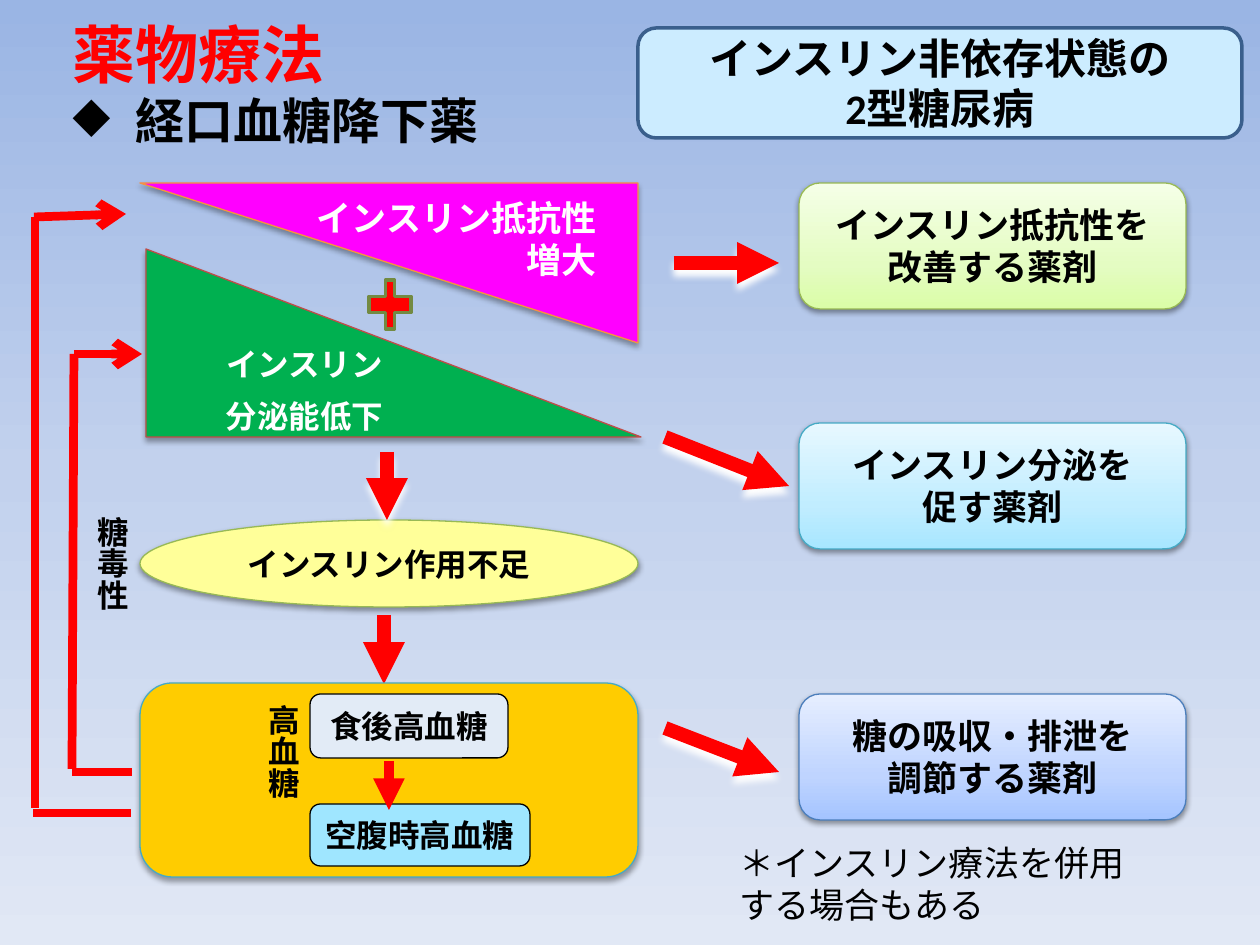
from collections import namedtuple
from copy import deepcopy
from dataclasses import dataclass

from lxml import etree
from pptx import Presentation
from pptx import util as u
from pptx.dml.color import RGBColor
from pptx.enum import shapes, text
from pptx.oxml.ns import qn

PX = 914400 / 126  # EMU per px
KIND = shapes.MSO_SHAPE
ALIGN = text.PP_ALIGN
MIDDLE, TOP = text.MSO_ANCHOR.MIDDLE, text.MSO_ANCHOR.TOP


@dataclass(frozen=True)
class Theme:
    red: str = "FF0000"
    black: str = "000000"
    white: str = "FFFFFF"
    cjk: str = "Noto Sans CJK JP"
    latin: str = "Calibri"
    heading: str = "Arial"
    title: int = 36
    subtitle: int = 28
    banner: int = 24
    large: int = 20
    body: int = 18
    gap: int = 8
    # Shadows: colour, opacity %, blur pt, distance pt
    deep: tuple = ("000000", 35, 3.1, 1.8)
    soft: tuple = ("000000", 38, 3.1, 1.6)
    glow: tuple = ("FFFFFF", 100, 4, 4)


T = Theme()


class Box(namedtuple("Box", "x y w h")):
    def at(self, dx, dy, w, h):
        return Box(self.x + dx, self.y + dy, w, h)

    def emu(self):
        return [px(value) for value in self]


def px(value):
    return u.Emu(round(value * PX))


def rgb(value):
    return RGBColor.from_string(value)


def add_shadow(effects, shadow):
    colour, opacity, blur, distance = shadow
    outer = etree.SubElement(effects, qn("a:outerShdw"), blurRad=str(u.Pt(blur)),
                             dist=str(u.Pt(distance)), dir="5400000", rotWithShape="0")
    tone = etree.SubElement(outer, qn("a:srgbClr"), val=colour)
    etree.SubElement(tone, qn("a:alpha"), val=str(opacity * 1000))


def fill_gradient(fill, owner, stops, angle):
    fill.gradient()
    fill.gradient_angle = angle
    stop_list = next(owner.element.iter(qn("a:gsLst")))
    stop_list.append(deepcopy(stop_list[0]))
    for stop, (position, colour) in zip(fill.gradient_stops, stops):
        stop.position = position
        stop.color.rgb = rgb(colour)


def add_shape(page, box, kind, fill, line, width=0.75, shadow=None):
    shape = page.shapes.add_shape(kind, *box.emu())
    shape.shadow.inherit = False
    if shadow:
        add_shadow(shape.element.spPr.find(qn("a:effectLst")), shadow)
    if isinstance(fill, str):
        shape.fill.solid()
        shape.fill.fore_color.rgb = rgb(fill)
    else:
        fill_gradient(shape.fill, shape, fill, 90)
    shape.line.color.rgb = rgb(line)
    shape.line.width = u.Pt(width)
    return shape


def write(shape, lines, size, font=T.cjk, colour=T.black, bold=True, align=ALIGN.CENTER,
          anchor=MIDDLE, wrap=False, gap=0, insets=None):
    frame = shape.text_frame
    frame.word_wrap = wrap
    frame.vertical_anchor = anchor
    if insets:
        (frame.margin_left, frame.margin_top,
         frame.margin_right, frame.margin_bottom) = [px(value) for value in insets]
    frame.text = "\n".join(lines)
    for para in frame.paragraphs:
        para.alignment = align
        para.space_before = u.Pt(gap)
        para.font.name = font
        para.font.size = u.Pt(size)
        para.font.bold = bold
        para.font.color.rgb = rgb(colour)
    return frame


def add_line(page, box, start, end, width, head=None, shadow=None):
    points = [px(v) for v in (box.x + start[0], box.y + start[1],
                              box.x + end[0], box.y + end[1])]
    line = page.shapes.add_connector(shapes.MSO_CONNECTOR.STRAIGHT, *points)
    line.line.color.rgb = rgb(T.red)
    line.line.width = u.Pt(width)
    if head:
        etree.SubElement(line.line._get_or_add_ln(), qn("a:tailEnd"), type=head)
    effects = etree.SubElement(line.element.spPr, qn("a:effectLst"))
    if shadow:
        add_shadow(effects, shadow)


def add_vertical_label(page, box, label):
    frame = write(page.shapes.add_textbox(*box.emu()), [label], T.body,
                  anchor=TOP, wrap=True)
    frame._txBody.bodyPr.set("vert", "eaVert")


def add_heading(page, box):
    title = page.shapes.title
    title.left, title.top, title.width, title.height = box.emu()
    frame = write(title, ["薬物療法", "経口血糖降下薬"], T.title, T.heading, T.red,
                  align=ALIGN.LEFT, anchor=TOP, wrap=True)
    frame.auto_size = text.MSO_AUTO_SIZE.NONE
    subtitle = frame.paragraphs[1]
    subtitle.font.size = u.Pt(T.subtitle)
    subtitle.font.color.rgb = rgb(T.black)
    props = subtitle._p.get_or_add_pPr()
    props.set("marL", str(u.Inches(0.5)))
    props.set("indent", str(u.Inches(-0.5)))
    bullet = etree.Element(qn("a:buChar"), char="◆")
    props.find(qn("a:defRPr")).addprevious(bullet)
    # Patient group
    banner = add_shape(page, box.at(578, 19, 604, 110), KIND.ROUNDED_RECTANGLE,
                       "CCECFF", "3A5F8C", 2)
    write(banner, ["インスリン非依存状態の", "2型糖尿病"], T.banner, T.latin, wrap=True)


def add_causes(page, box):
    # Falling secretion
    secretion = add_shape(page, box.at(6, 66, 495, 188), KIND.RIGHT_TRIANGLE,
                          "00B050", "BF4C48", shadow=T.deep)
    write(secretion, ["インスリン", "分泌能低下"], T.body, colour=T.white, gap=T.gap,
          insets=(0, 6, 13, 6))
    # Rising resistance, turned over with its text kept upright
    resistance = add_shape(page, box.at(0, 0, 498, 160), KIND.RIGHT_TRIANGLE,
                           "FF00FF", "F69240", shadow=T.deep)
    frame = write(resistance, ["インスリン抵抗性", "増大"], T.large, colour=T.white,
                  align=ALIGN.RIGHT, anchor=TOP, insets=(0, 0, 0, 0))
    for flip in ("flipH", "flipV"):
        resistance.element.spPr.find(qn("a:xfrm")).set(flip, "1")
    frame._txBody.bodyPr.set("rot", "10800000")
    plus = add_shape(page, box.at(229, 97, 42, 49), KIND.CROSS, T.red, "738A42", 2)
    plus.adjustments[0] = 0.39
    # Resulting lack of insulin action
    lack = add_shape(page, box.at(0, 337, 498, 87), KIND.OVAL,
                     "FFFF99", "98B955", shadow=T.soft)
    write(lack, ["インスリン作用不足"], T.body)
    add_line(page, box, (247, 269), (247, 337), 8, "triangle", T.glow)
    add_line(page, box, (244, 432), (244, 501), 8, "triangle")


def add_hyperglycemia(page, box):
    add_shape(page, box, KIND.ROUNDED_RECTANGLE, "FFCC00", "46AAC5", shadow=T.deep)
    add_vertical_label(page, box.at(105, 9, 63, 156), "高血糖")
    for label, top, width, height, fill in (("食後高血糖", 11, 198, 64, "E2EBF6"),
                                            ("空腹時高血糖", 121, 220, 62, "9FE6FF")):
        state = add_shape(page, box.at(170, top, width, height),
                          KIND.ROUNDED_RECTANGLE, fill, T.black)
        write(state, [label], T.body)
    add_line(page, box, (249, 78), (249, 127), 6, "triangle")


def add_glucotoxicity(page, box):
    add_vertical_label(page, box.at(41, 290, 63, 156), "糖毒性")
    # Inner and outer feedback paths
    for start, end, head in (((99, 558), (39, 558), None),
                             ((98, 599), (0, 599), None),
                             ((39, 555), (41, 140), None),
                             ((2, 594), (2, 3), None),
                             ((1, 3), (93, 0), "arrow"),
                             ((41, 140), (109, 140), "arrow")):
        add_line(page, box, start, end, 5, head)


def add_treatments(page, box):
    cards = (
        (0, ["インスリン抵抗性を改善する薬剤"], ("DAFDA7", "E4FCC2", "F5FFE7"), "98B955",
         (9, 80), (114, 80)),
        (240, ["インスリン分泌を", "促す薬剤"], ("A7E6FF", "C1EDFF", "E7F8FF"), "46AAC5",
         (0, 254), (124, 303)),
        (511, ["糖の吸収・排泄を", "調節する薬剤"], ("A4C4FF", "BFD4FF", "E6EEFF"), "4B7EBC",
         (0, 545), (114, 589)))
    for top, lines, tones, edge, start, end in cards:
        card = add_shape(page, box.at(134, top, 387, 126), KIND.ROUNDED_RECTANGLE,
                         list(zip((0, 0.35, 1), tones)), edge, shadow=T.soft)
        write(card, lines, T.large, T.latin, wrap=True)
        add_line(page, box, start, end, 8, "triangle", T.glow)
    note = page.shapes.add_textbox(*box.at(62, 652, 441, 97).emu())
    write(note, ["＊インスリン療法を併用する場合もある"], T.large, T.latin, bold=False,
          align=ALIGN.LEFT, anchor=TOP, wrap=True)


def main():
    deck = Presentation()
    deck.slide_width, deck.slide_height = px(1260), px(945)
    page = deck.slides.add_slide(deck.slide_layouts[5])
    fill_gradient(page.background.fill, page,
                  ((0, "9AB5E4"), (0.5, "C2D1ED"), (1, "E1E8F5")), 270)
    add_heading(page, Box(60, 9, 1181, 149))
    add_causes(page, Box(140, 183, 498, 501))
    add_hyperglycemia(page, Box(140, 683, 498, 194))
    add_glucotoxicity(page, Box(33, 214, 109, 599))
    add_treatments(page, Box(665, 183, 521, 749))
    deck.save("out.pptx")


if __name__ == "__main__":
    main()
